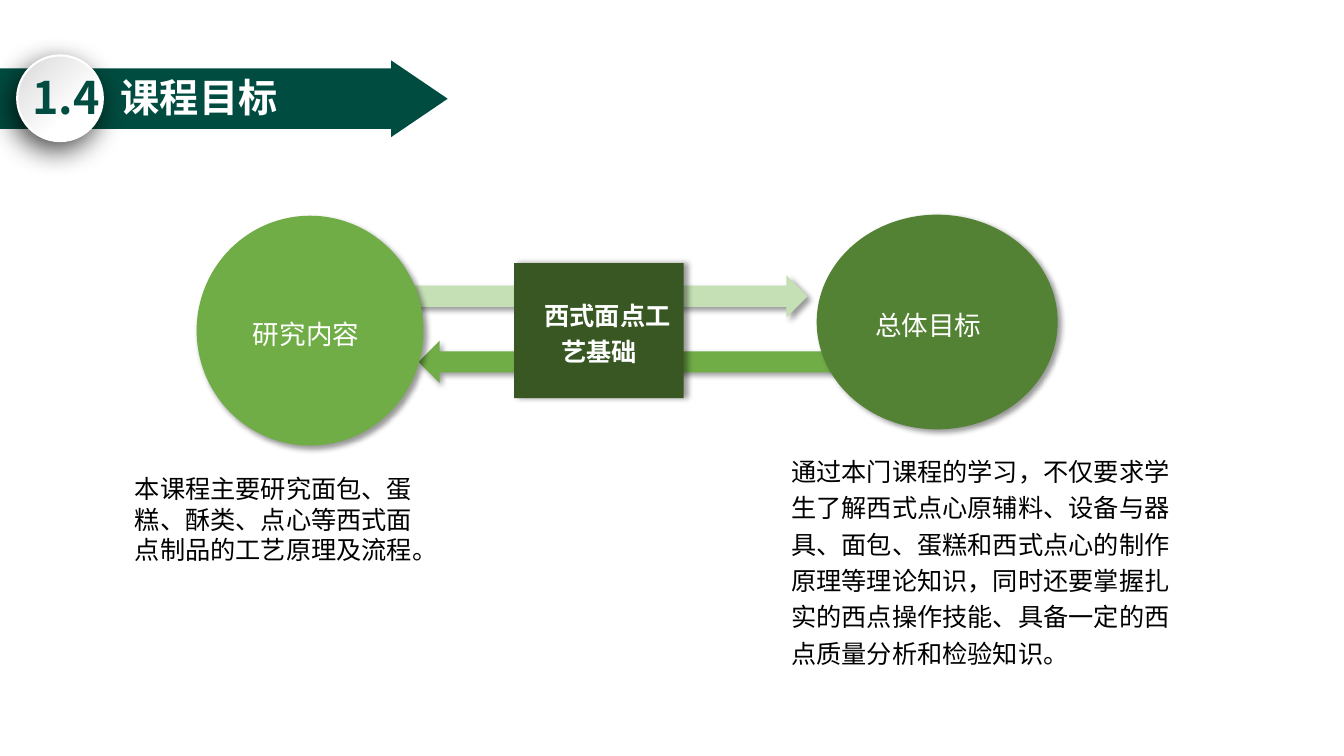
from lxml import etree
from pptx import Presentation
from pptx.dml.color import RGBColor
from pptx.enum.shapes import MSO_SHAPE as Preset
from pptx.enum.text import MSO_ANCHOR as Anchor, MSO_AUTO_SIZE as AutoSize, PP_ALIGN as Align
from pptx.oxml.ns import qn
from pptx.util import Inches, Pt

THEME = {
    "font": "Noto Sans CJK SC",
    "teal": "004C40", "white": "FFFFFF", "black": "000000", "silver": "DBDBDD",
    "pale": "C5E0B4", "green": "70AD47", "forest": "548235", "dark": "385723",
    "number": 32, "title": 28, "circle": 19, "body": 18,
}
SOFT = (40, 4, 3, 45)
FLAT = (40, 4, 3, 0)
DEEP = (70, 20, 7, 120)


def add_figure(preset, box, color, shadow=None):
    figure = slide.shapes.add_shape(preset, *map(Inches, box))
    figure.fill.solid()
    figure.fill.fore_color.rgb = RGBColor.from_string(THEME[color])
    figure.line.fill.background()
    figure.shadow.inherit = False
    if shadow:
        alpha, blur, distance, angle = shadow
        effects = figure.element.spPr.find(qn("a:effectLst"))
        outer = etree.SubElement(
            effects, qn("a:outerShdw"), blurRad=str(Pt(blur)), dist=str(Pt(distance)),
            dir=str(angle * 60000), algn="ctr", rotWithShape="0")
        tint = etree.SubElement(outer, qn("a:srgbClr"), val=THEME["black"])
        etree.SubElement(tint, qn("a:alpha"), val=str(alpha * 1000))
    return figure


def write(shape, text, size, color, bold=False, spacing=1.0, **frame_format):
    frame = shape.text_frame
    settings = {"word_wrap": True, "margin_left": Inches(0.1), "margin_right": Inches(0.1),
                "margin_top": Inches(0.05), "margin_bottom": Inches(0.05)}
    for name, value in (settings | frame_format).items():
        setattr(frame, name, value)
    paragraph = frame.paragraphs[0]
    paragraph.alignment = Align.LEFT
    paragraph.line_spacing = spacing
    run = paragraph.add_run()
    run.text = text
    for name, value in {"name": THEME["font"], "size": Pt(THEME[size]), "bold": bold}.items():
        setattr(run.font, name, value)
    run.font.color.rgb = RGBColor.from_string(THEME[color])
    etree.SubElement(run.font._element, qn("a:ea"), typeface=THEME["font"])
    return paragraph


presentation = Presentation()
presentation.slide_width = Inches(13.33)
presentation.slide_height = Inches(7.5)
slide = presentation.slides.add_slide(presentation.slide_layouts[6])

add_figure(Preset.RECTANGLE, (0, 0.68, 3.89, 0.6), "teal")
banner_tip = add_figure(Preset.ISOSCELES_TRIANGLE, (3.78, 0.7, 0.76, 0.56), "teal")
banner_tip.rotation = 90
title = slide.shapes.add_textbox(*map(Inches, (1.1, 0.68, 7.76, 0.87)))
write(title, "课程目标", "title", "white", bold=True)

badge = add_figure(Preset.OVAL, (0.17, 0.55, 0.85, 0.85), "white", DEEP)
badge.fill.gradient()
for stop, (position, color) in zip(badge.fill.gradient_stops, ((0.34, "white"), (0.96, "silver"))):
    stop.position = position
    stop.color.rgb = RGBColor.from_string(THEME[color])
gradient = badge.element.spPr.find(qn("a:gradFill"))
linear = gradient.find(qn("a:lin"))
radial = etree.Element(qn("a:path"), {"path": "circle"})
etree.SubElement(radial, qn("a:fillToRect"), l="100000", t="100000")
gradient.replace(linear, radial)
badge.line.color.rgb = RGBColor.from_string(THEME["white"])
badge.line.width = Pt(1.5)
number = slide.shapes.add_textbox(*map(Inches, (0.22, 0.64, 0.87, 0.64)))
write(number, "1.4", "number", "teal", bold=True, word_wrap=False,
      auto_size=AutoSize.SHAPE_TO_FIT_TEXT)

add_figure(Preset.RIGHT_ARROW, (4, 2.73, 4.01, 0.42), "pale", SOFT)
add_figure(Preset.LEFT_ARROW, (4.15, 3.38, 4.15, 0.42), "green", SOFT)

circles = [
    ("研究内容", (1.95, 2.14, 2.25, 2.28), "green"),
    ("总体目标", (8.1, 2.13, 2.39, 2.13), "forest"),
]
for label, box, color in circles:
    circle = add_figure(Preset.OVAL, box, color, SOFT)
    write(circle, label, "circle", "white", spacing=1.2,
          vertical_anchor=Anchor.MIDDLE, margin_left=Inches(0.23))

course = add_figure(Preset.RECTANGLE, (5.1, 2.61, 1.68, 1.34), "dark", FLAT)
course_name = write(course, "西式面点工艺基础", "body", "white", bold=True, spacing=1.2,
                    vertical_anchor=Anchor.MIDDLE)
course_name.alignment = Align.CENTER
course_name._p.get_or_add_pPr().set("indent", str(Inches(0.17)))

descriptions = [
    ("通过本门课程的学习，不仅要求学生了解西式点心原辅料、设备与器具、面包、蛋糕和西式点心的制作原理等理论知识，"
     "同时还要掌握扎实的西点操作技能、具备一定的西点质量分析和检验知识。", (7.75, 4.42, 4.15, 2.26), 1.2),
    ("本课程主要研究面包、蛋糕、酥类、点心等西式面点制品的工艺原理及流程。", (1.24, 4.65, 2.97, 1.01), 1.0),
]
for text, box, spacing in descriptions:
    description = slide.shapes.add_textbox(*map(Inches, box))
    write(description, text, "body", "black", spacing=spacing,
          auto_size=AutoSize.SHAPE_TO_FIT_TEXT)

presentation.save("out.pptx")
